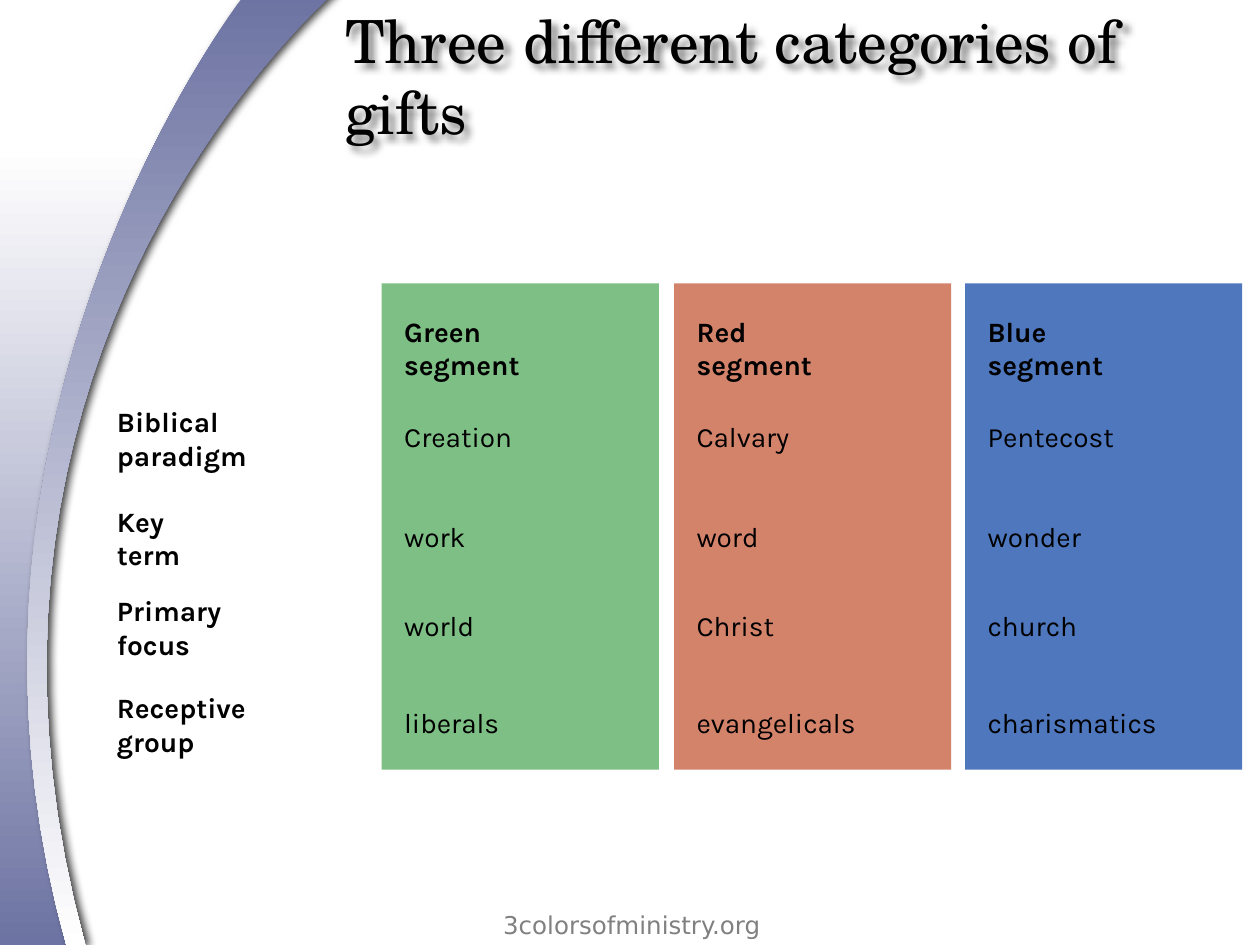
from lxml import etree
from pptx import Presentation
from pptx.dml.color import RGBColor
from pptx.enum.shapes import MSO_SHAPE
from pptx.enum.text import MSO_ANCHOR, PP_ALIGN
from pptx.oxml.ns import qn
from pptx.util import Inches, Pt

RECT = MSO_SHAPE.RECTANGLE
TOP, MIDDLE = MSO_ANCHOR.TOP, MSO_ANCHOR.MIDDLE
LEFT, CENTER = PP_ALIGN.LEFT, PP_ALIGN.CENTER

COLORS = {
    "white": "FFFFFF", "black": "000000", "gray": "808080", "violet": "6D73A2",
    "green": "7EBF85", "red": "D4836B", "blue": "4E77BE",
}
STEPS = 40


def rgb(name):
    """Return the named color."""
    return RGBColor.from_string(COLORS[name])


def curve(p0, p1, p2, p3):
    """Return points along a cubic curve, its start included."""
    points = []
    for step in range(STEPS + 1):
        t = step / STEPS
        u = 1 - t
        points.append(tuple(
            u**3 * a + 3 * u * u * t * b + 3 * u * t * t * c + t**3 * d
            for a, b, c, d in zip(p0, p1, p2, p3)))
    return points


class Deck:
    """Style and current slide, with a method for each kind of element."""

    def __init__(self, slide, font="Karla", size=16):
        self.shapes = slide.shapes
        self.font = font
        self.size = size

    def shade(self, shape, alpha, blur, dist, angle):
        """Give a shape a soft black shadow."""
        shape.shadow.inherit = False
        effects = shape._element.spPr.find(qn("a:effectLst"))
        outer = etree.SubElement(
            effects, qn("a:outerShdw"), blurRad=str(Pt(blur)),
            dist=str(Pt(dist)), dir=str(angle * 60000), rotWithShape="0")
        color = etree.SubElement(outer, qn("a:srgbClr"), val=COLORS["black"])
        etree.SubElement(color, qn("a:alpha"), val=str(alpha * 1000))

    def sweep(self, points, first, last):
        """Draw a closed outline filled with a gradient from top to bottom."""
        spots = [(Inches(x), Inches(y)) for x, y in points]
        pen = self.shapes.build_freeform(*spots[0])
        pen.add_line_segments(spots[1:], close=True)
        shape = pen.convert_to_shape()
        shape.shadow.inherit = False
        shape.line.fill.background()
        shape.fill.gradient()
        shape.fill.gradient_angle = 270
        for stop, name in zip(shape.fill.gradient_stops, (first, last)):
            stop.color.rgb = rgb(name)
        return shape

    def panel(self, x, y, w, h, color):
        """Draw a plain colored rectangle."""
        shape = self.shapes.add_shape(
            RECT, Inches(x), Inches(y), Inches(w), Inches(h))
        shape.shadow.inherit = False
        shape.fill.solid()
        shape.fill.fore_color.rgb = rgb(color)
        shape.line.fill.background()

    def text(self, x, y, w, h, lines, bold=False, font=None, size=None,
             color="black", align=LEFT, anchor=MIDDLE):
        """Write one paragraph for each line."""
        box = self.shapes.add_textbox(
            Inches(x), Inches(y), Inches(w), Inches(h))
        frame = box.text_frame
        frame.word_wrap = True
        frame.vertical_anchor = anchor
        for i, line in enumerate(lines):
            para = frame.add_paragraph() if i else frame.paragraphs[0]
            para.alignment = align
            run = para.add_run()
            run.text = line
            run.font.name = font or self.font
            run.font.size = Pt(size or self.size)
            run.font.bold = bold
            run.font.color.rgb = rgb(color)
        return box


def main():
    """Build the slide of gift categories."""
    prs = Presentation()
    prs.slide_width, prs.slide_height = Inches(10), Inches(7.5)
    deck = Deck(prs.slides.add_slide(prs.slide_layouts[6]))

    glow = [(0, 1.17)] + curve((1.51, 1.17), (-0.35, 4.32), (0.5, 6.89),
                               (0.65, 7.5)) + [(0, 7.5)]
    deck.sweep(glow, "white", "violet")
    band = (curve((0.68, 7.51), (-0.64, 2.73), (2.67, -0.07), (2.67, -0.07))
            + curve((1.97, -0.08), (1.97, -0.08), (-0.67, 3.26), (0.53, 7.51)))
    deck.shade(deck.sweep(band, "violet", "white"), 75, 5, 3, 0)

    title = deck.text(2.64, 0, 7.36, 1.19,
                      ["Three different categories of gifts"],
                      font="TeX Gyre Schola", size=34)
    deck.shade(title, 50, 4, 4, 45)
    deck.text(3.43, 7.17, 3.17, 0.33, ["3colorsofministry.org"],
              font="DejaVu Sans", size=14, color="gray", align=CENTER,
              anchor=TOP)

    rows = [
        (3.16, ["Biblical", "paradigm"]), (3.95, ["Key", "term"]),
        (4.66, ["Primary", "focus"]), (5.43, ["Receptive", "group"]),
    ]
    columns = [
        (3.03, "green", ["Creation", "work", "world", "liberals"]),
        (5.35, "red", ["Calvary", "word", "Christ", "evangelicals"]),
        (7.66, "blue", ["Pentecost", "wonder", "church", "charismatics"]),
    ]
    for y, label in rows:
        deck.text(0.83, y, 2.09, 0.64, label, bold=True)
    for x, color, words in columns:
        deck.panel(x, 2.25, 2.2, 3.86, color)
        deck.text(x + 0.08, 2.44, 2.12, 0.64,
                  [color.title(), "segment"], bold=True)
        for (y, _), word in zip(rows, words):
            deck.text(x + 0.08, y + 0.12, 2.13, 0.37, [word])

    prs.save("out.pptx")


if __name__ == "__main__":
    main()
